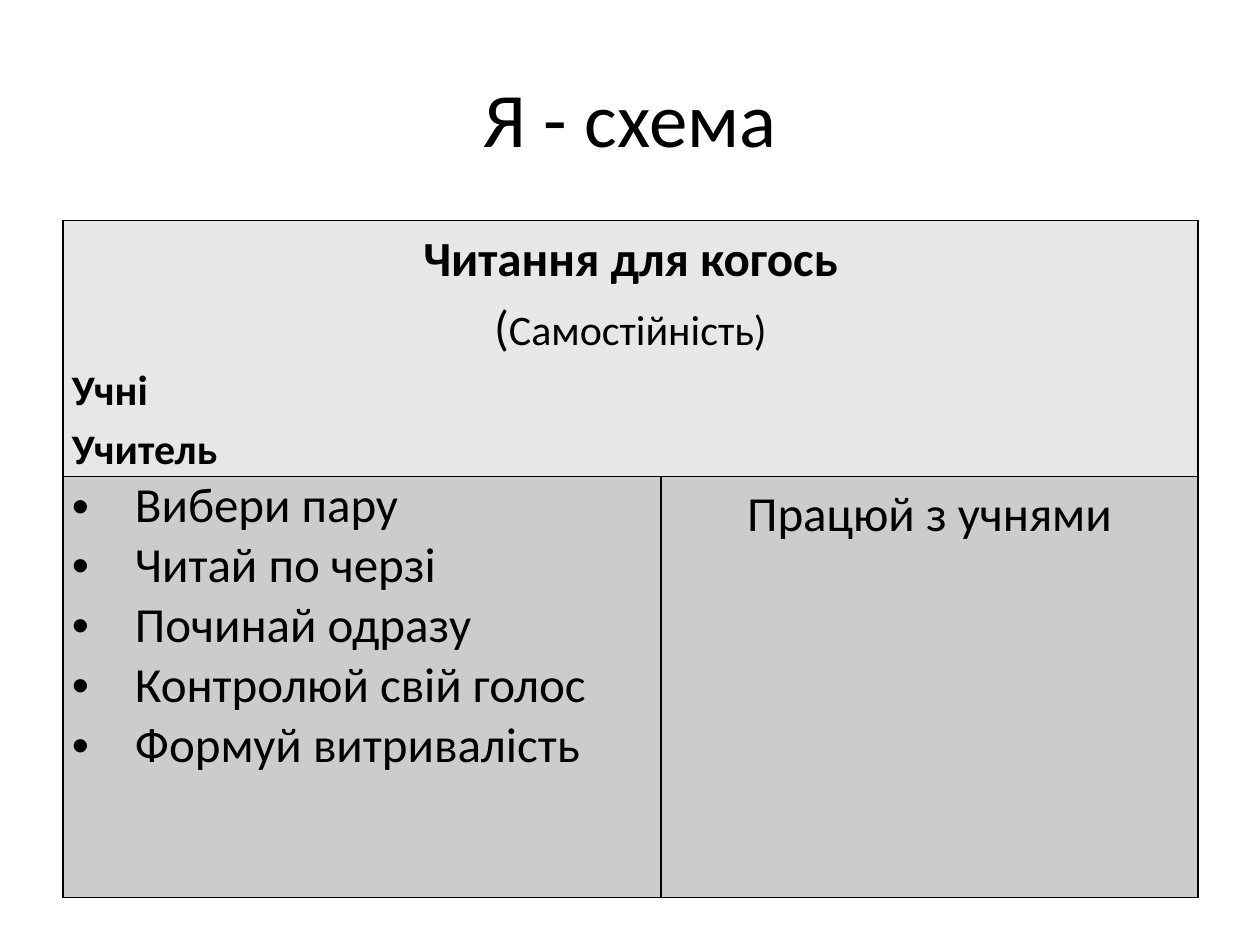
from lxml.etree import SubElement
from pptx import Presentation
from pptx.dml.color import RGBColor as RGB
from pptx.enum.text import MSO_ANCHOR as ANCHOR, PP_ALIGN as ALIGN
from pptx.oxml.ns import qn
from pptx.util import Cm, Pt

COLORS = {"text": "000000", "line": "000000", "head": "E7E7E7", "body": "CCCCCC"}


class SlideBuilder:
    font = "Calibri"
    inset = {"margin_left": Cm(0.18), "margin_right": Cm(0.18),
             "margin_top": 0, "margin_bottom": 0}

    def __init__(self, prs):
        self.s = prs.slides.add_slide(prs.slide_layouts[5])

    def run(self, p, text, size, bold=False):
        r = p.add_run()
        r.text = text
        formats = {"name": self.font, "size": Pt(size), "bold": bold}
        for name, value in formats.items():
            setattr(r.font, name, value)
        r.font.color.rgb = RGB.from_string(COLORS["text"])

    def title(self, text, box):
        sp = self.s.shapes.title
        for name, value in zip(("left", "top", "width", "height"), box):
            setattr(sp, name, Cm(value))
        tf = sp.text_frame
        tf.vertical_anchor = ANCHOR.MIDDLE
        p = tf.paragraphs[0]
        p.alignment = ALIGN.CENTER
        self.run(p, text, 44)

    def table(self, left, top, widths, heights):
        size = (len(heights), len(widths))
        box = (left, top, sum(widths), sum(heights))
        tbl = self.s.shapes.add_table(*size, *map(Cm, box)).table
        for col, width in zip(tbl.columns, widths):
            col.width = Cm(width)
        for row, height in zip(tbl.rows, heights):
            row.height = Cm(height)
        return tbl

    def cell(self, cell, fill):
        for name, value in self.inset.items():
            setattr(cell, name, value)
        tc_pr = cell._tc.get_or_add_tcPr()
        for side in ("lnL", "lnR", "lnT", "lnB"):
            ln = SubElement(tc_pr, qn(f"a:{side}"), w=str(Pt(1)))
            solid = SubElement(ln, qn("a:solidFill"))
            SubElement(solid, qn("a:srgbClr"), val=COLORS["line"])
        cell.fill.solid()
        cell.fill.fore_color.rgb = RGB.from_string(COLORS[fill])

    def paragraphs(self, cell, items, align=ALIGN.LEFT, spacing=1.15, bullet=False):
        """Each item is a list of (text, size, bold) runs."""
        tf = cell.text_frame
        for runs in items:
            p = tf.paragraphs[0]
            if p.runs:
                p = tf.add_paragraph()
            p.alignment = align
            p.line_spacing = spacing
            if bullet:
                p_pr = p._p.get_or_add_pPr()
                p_pr.set("marL", str(Cm(1.27)))
                p_pr.set("indent", str(-Cm(1.27)))
                SubElement(p_pr, qn("a:buFont"), typeface="Arial")
                SubElement(p_pr, qn("a:buChar"), char="•")
            for i, (text, size, bold) in enumerate(runs):
                if text == "\n":
                    p.add_line_break()
                else:
                    self.run(p, text, size, bold)


def main():
    prs = Presentation()
    prs.slide_width, prs.slide_height = Cm(25.4), Cm(19.05)
    b = SlideBuilder(prs)

    # Title
    b.title("Я - схема", (1.27, 0.76, 22.86, 3.18))

    # Table with a merged heading row
    tbl = b.table(1.27, 4.45, widths=(12.05, 10.83), heights=(5.13, 8.49))
    tbl.cell(0, 0).merge(tbl.cell(0, 1))
    for row, fill in enumerate(("head", "body")):
        for col in range(2):
            b.cell(tbl.cell(row, col), fill)

    # Heading
    head, pupils, teacher = tbl.cell(0, 0), tbl.cell(1, 0), tbl.cell(1, 1)
    b.paragraphs(head, [
        [("Читання для когось", 28, True)],
        [("(", 28, False), ("Самостійність)", 24, False)],
    ], ALIGN.CENTER)
    b.paragraphs(head, [[("Учні", 24, True), ("\n", 24, True), ("Учитель", 24, True)]])

    # Tasks of the pupils and the teacher
    tasks = ("Вибери пару", "Читай по черзі", "Починай одразу",
             "Контролюй свій голос", "Формуй витривалість")
    b.paragraphs(pupils, [[(task, 28, False)] for task in tasks], spacing=1.0, bullet=True)
    b.paragraphs(teacher, [[("Працюй з учнями", 28, False)]], ALIGN.CENTER)

    prs.save("out.pptx")


if __name__ == "__main__":
    main()
